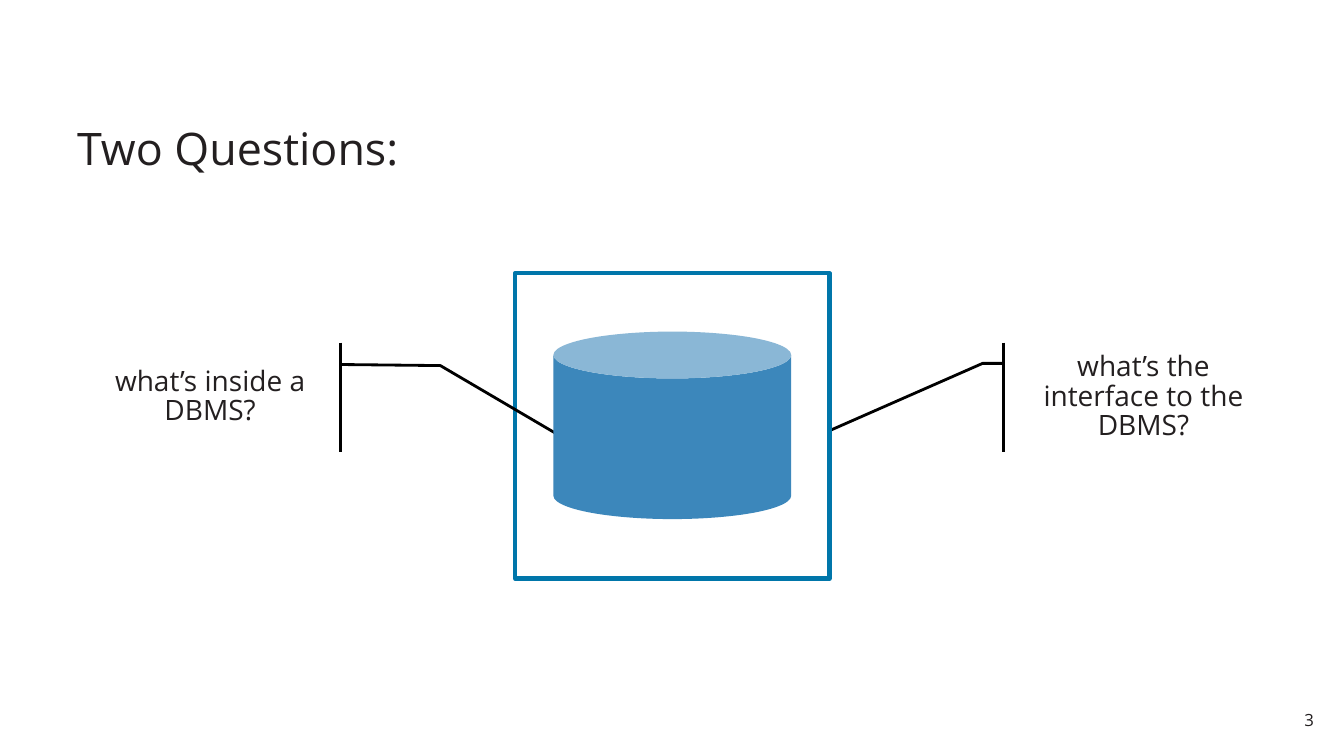
"""Build the slide that asks two questions about a DBMS."""
import pptx
import pptx.dml.color
import pptx.enum.shapes
import pptx.enum.text
import pptx.util

Pt = pptx.util.Pt
Kind = pptx.enum.shapes.MSO_SHAPE
Align = pptx.enum.text.PP_ALIGN
Anchor = pptx.enum.text.MSO_ANCHOR


def paint(color, value):
    color.rgb = pptx.dml.color.RGBColor.from_string(value)


class Sketch:
    font = "Open Sans"
    ink = "231F20"

    def __init__(self, slide):
        self.slide = slide

    def label(self, shape, text, size, align, anchor, inset, space=1.0):
        frame = shape.text_frame
        frame.text = text
        frame.word_wrap = True
        frame.auto_size = pptx.enum.text.MSO_AUTO_SIZE.NONE
        frame.vertical_anchor = anchor
        (frame.margin_left, frame.margin_top,
         frame.margin_right, frame.margin_bottom) = map(Pt, inset)
        para = frame.paragraphs[0]
        para.alignment = align
        para.line_spacing = space
        para.font.name = self.font
        para.font.size = Pt(size)
        paint(para.font.color, self.ink)

    def title(self, text, box):
        shape = self.slide.shapes.title
        shape.left, shape.top, shape.width, shape.height = map(Pt, box)
        self.label(shape, text, 32, Align.LEFT, Anchor.BOTTOM, (6, 3, 6, 3), 0.9)

    def number(self, text, box):
        shape = self.slide.shapes.add_textbox(*map(Pt, box))
        self.label(shape, text, 12, Align.RIGHT, Anchor.TOP, (6, 4, 6, 4))

    def shape(self, kind, box, fill=None, line=None, width=0):
        shape = self.slide.shapes.add_shape(kind, *map(Pt, box))
        shape.shadow.inherit = False
        if fill:
            shape.fill.solid()
            paint(shape.fill.fore_color, fill)
        else:
            shape.fill.background()
        if line:
            paint(shape.line.color, line)
            shape.line.width = Pt(width)
        else:
            shape.line.fill.background()
        return shape

    def callout(self, text, left, bends):
        box = (left, 244.8, 166.3, 77.8)
        shape = self.shape(Kind.LINE_CALLOUT_2_ACCENT_BAR, box, line="000000", width=2)
        for i, bend in enumerate(bends):
            shape.adjustments[i] = bend
        self.label(shape, text, 20, Align.CENTER, Anchor.MIDDLE, (7.2, 0, 0, 0), 0.88)


def main():
    deck = pptx.Presentation()
    deck.slide_width, deck.slide_height = Pt(960), Pt(540)
    sketch = Sketch(deck.slides.add_slide(deck.slide_layouts[5]))
    sketch.title("Two Questions:", (49, 54.7, 861.8, 73.4))
    sketch.number("3", (910.8, 502.6, 33.8, 22.3))
    sketch.callout("what’s the interface to the DBMS?", 730.1,
                   (0.19, -0.08, 0.19, -0.17, 0.81, -0.83))
    sketch.shape(Kind.RECTANGLE, (367.9, 195.1, 224.6, 218.2), line="0076AA", width=3)
    sketch.callout("what’s inside a DBMS?", 63.4,
                   (0.2, 1.08, 0.21, 1.51, 0.85, 2.02))
    sketch.shape(Kind.CAN, (395.3, 236.9, 169.9, 133.9), fill="3C87BB")
    deck.save("out.pptx")


if __name__ == "__main__":
    main()
